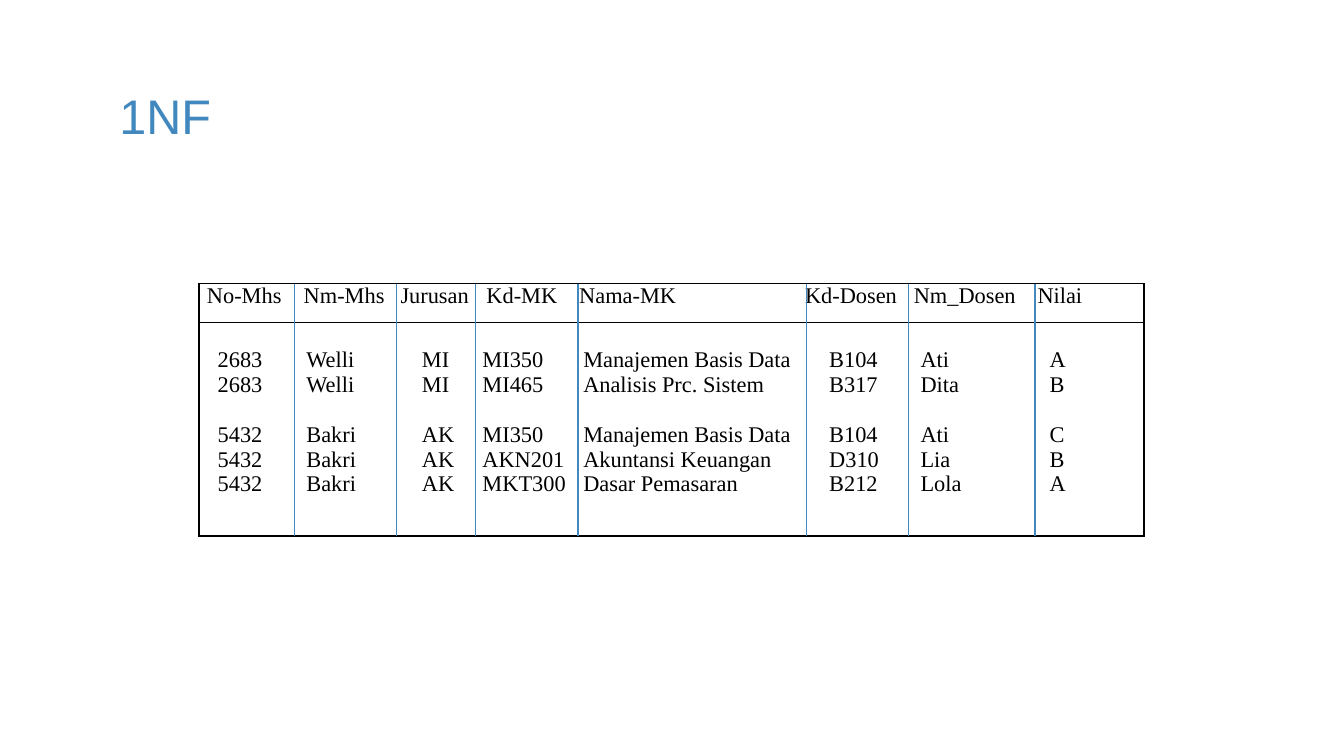
import pptx
import pptx.enum.shapes
import pptx.enum.text
import pptx.oxml.ns
import pptx.util
from lxml import etree
from pptx.dml.color import RGBColor
from pptx.util import Inches, Pt

COLORS = {"accent": "4088BE", "ink": "000000"}
LINE_PITCH = 13.3

SLIDE_WIDTH = 10
LEFT, TOP, WIDTH = 1.48, 2.11, 7.03
ROW_HEIGHTS = [0.29, 1.59]
DIVIDERS = [2.19, 2.95, 3.54, 4.3, 6, 6.76, 7.7]

# Tab stops in inches from the left edge of the cell text
HEADER_TABS = [0.72, 1.44, 2.08, 2.77, 4.45, 5.26, 6.18]
BODY_TABS = [0.08, 0.74, 1.6, 2.05, 2.8, 4.63, 5.31, 6.27]

HEADER = ["No-Mhs", "Nm-Mhs", "Jurusan", "Kd-MK", "Nama-MK",
          "Kd-Dosen", "Nm_Dosen", "Nilai"]
STUDENTS = [
    (["2683", "Welli", "MI"], [
        ["MI350", "Manajemen Basis Data", "B104", "Ati", "A"],
        ["MI465", "Analisis Prc. Sistem", "B317", "Dita", "B"],
    ]),
    (["5432", "Bakri", "AK"], [
        ["MI350", "Manajemen Basis Data", "B104", "Ati", "C"],
        ["AKN201", "Akuntansi Keuangan", "D310", "Lia", "B"],
        ["MKT300", "Dasar Pemasaran", "B212", "Lola", "A"],
    ]),
]


def add_element(parent, tag, **attributes):
    element = etree.SubElement(parent, pptx.oxml.ns.qn(tag))
    for name, value in attributes.items():
        element.set(name, str(value))
    return element


def write_text(paragraph, text, *, font, size, color, pitch=None, before=0, tabs=()):
    run = paragraph.add_run()
    run.text = text
    run.font.name = font
    run.font.size = Pt(size)
    run.font.color.rgb = RGBColor.from_string(COLORS[color])
    if pitch:
        paragraph.line_spacing = Pt(pitch)
    paragraph.space_before = Pt(before)
    if tabs:
        tab_list = add_element(paragraph._p.get_or_add_pPr(), "a:tabLst")
        for position in tabs:
            add_element(tab_list, "a:tab", pos=int(Inches(position)), algn="l")


def write_row(paragraph, text, tabs, before=0):
    write_text(paragraph, text, font="Times New Roman", size=12, color="ink",
               pitch=LINE_PITCH, before=before, tabs=tabs)


def style_cell(cell, margin_top=0):
    cell.fill.background()
    cell.margin_left = cell.margin_right = Inches(0.06)
    cell.margin_top, cell.margin_bottom = Inches(margin_top), 0
    properties = cell._tc.get_or_add_tcPr()
    for index, side in enumerate(["a:lnL", "a:lnR", "a:lnT", "a:lnB"]):
        border = add_element(properties, side, w=int(Pt(1)))
        fill = add_element(border, "a:solidFill")
        add_element(fill, "a:srgbClr", val=COLORS["ink"])
        properties.insert(index, border)


def add_title(slide, text):
    box = slide.shapes.add_textbox(Inches(0.79), Inches(0.59), Inches(8.43), Inches(0.53))
    frame = box.text_frame
    frame.word_wrap = True
    frame.vertical_anchor = pptx.enum.text.MSO_ANCHOR.MIDDLE
    frame.margin_left = frame.margin_right = Inches(0.1)
    frame.margin_top = frame.margin_bottom = Inches(0.1)
    write_text(frame.paragraphs[0], text, font="Arial", size=26, color="accent")


def add_grade_table(slide):
    table = slide.shapes.add_table(2, 1, Inches(LEFT), Inches(TOP), Inches(WIDTH),
                                   Inches(sum(ROW_HEIGHTS))).table
    table.first_row = table.horz_banding = False
    for row, height in zip(table.rows, ROW_HEIGHTS):
        row.height = Inches(height)
    header, body = table.cell(0, 0), table.cell(1, 0)

    style_cell(header)
    write_row(header.text_frame.paragraphs[0], "\t".join(HEADER), HEADER_TABS)

    # One paragraph per course, with a one-line gap between students
    style_cell(body, margin_top=0.19)
    paragraph = body.text_frame.paragraphs[0]
    for student_index, (student, courses) in enumerate(STUDENTS):
        for course_index, course in enumerate(courses):
            starts_group = student_index > 0 and course_index == 0
            if student_index or course_index:
                paragraph = body.text_frame.add_paragraph()
            write_row(paragraph, "\t" + "\t".join(student + course), BODY_TABS,
                      before=LINE_PITCH if starts_group else 0)


def add_divider(slide, x):
    line = slide.shapes.add_connector(
        pptx.enum.shapes.MSO_CONNECTOR.STRAIGHT,
        Inches(x), Inches(TOP), Inches(x), Inches(TOP + sum(ROW_HEIGHTS)))
    line.line.color.rgb = RGBColor.from_string(COLORS["accent"])
    line.line.width = Pt(0.75)
    add_element(line._element.spPr, "a:effectLst")


def main():
    # Widescreen slide, 16:9
    presentation = pptx.Presentation()
    presentation.slide_width = Inches(SLIDE_WIDTH)
    presentation.slide_height = Inches(SLIDE_WIDTH * 9 / 16)
    slide = presentation.slides.add_slide(presentation.slide_layouts[6])

    add_title(slide, "1NF")
    add_grade_table(slide)
    for x in DIVIDERS:
        add_divider(slide, x)

    presentation.save("out.pptx")


if __name__ == "__main__":
    main()
